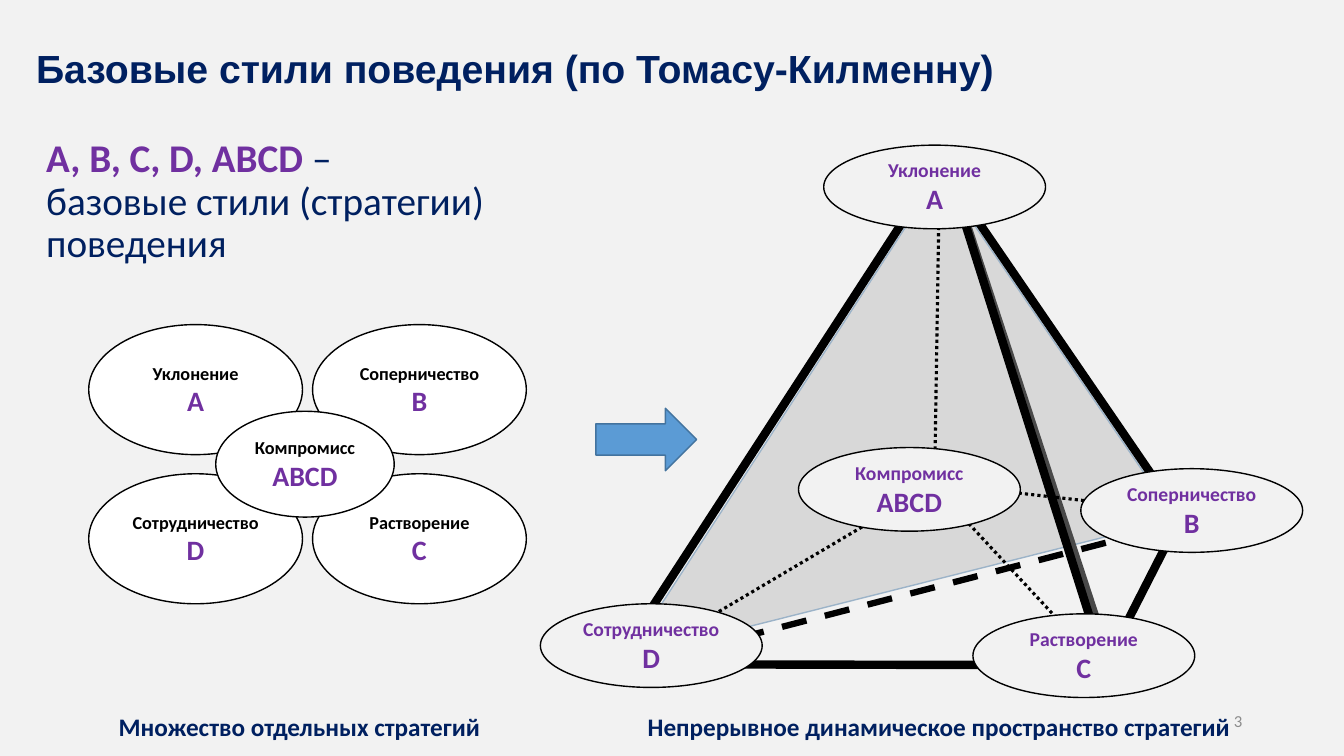
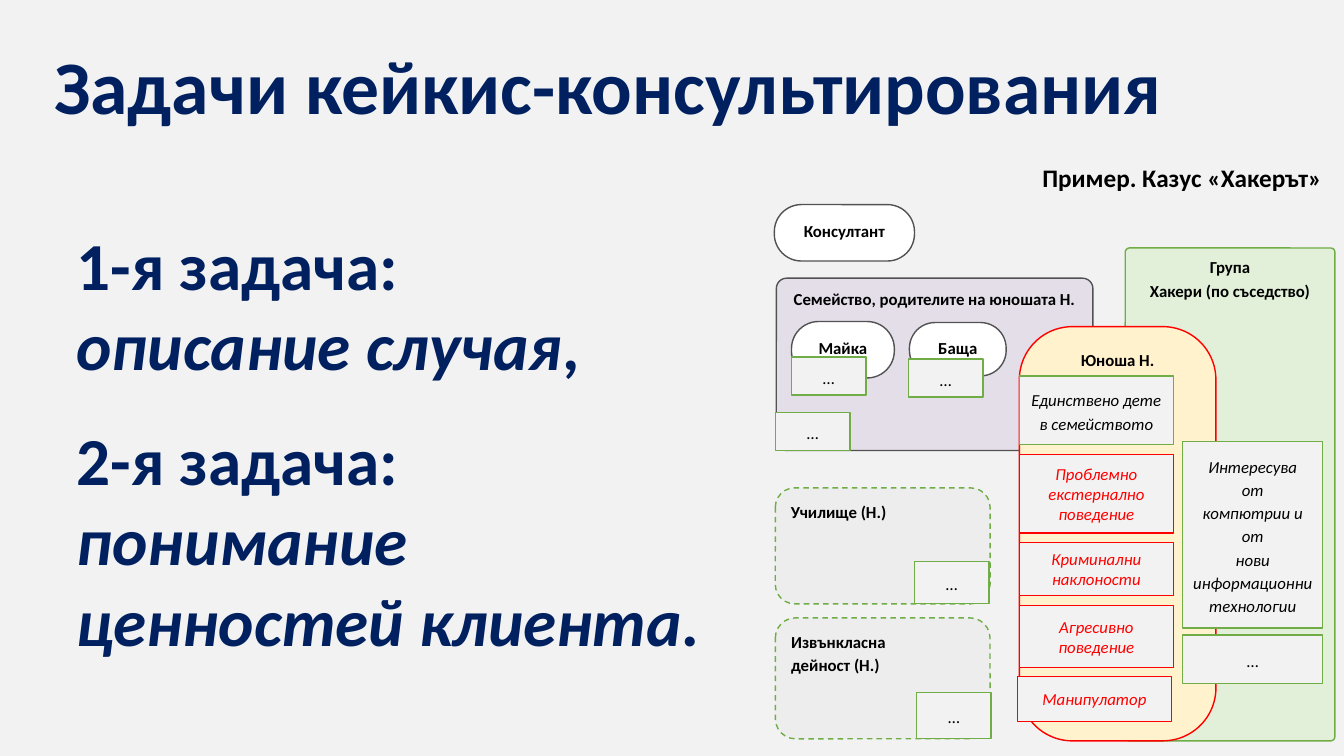
import dataclasses

import lxml.etree
import pptx
import pptx.dml.color
import pptx.enum.dml
import pptx.enum.shapes
import pptx.enum.text
import pptx.oxml.ns
import pptx.util

Inches = pptx.util.Inches
Pt = pptx.util.Pt
RGBColor = pptx.dml.color.RGBColor
MSO_SHAPE = pptx.enum.shapes.MSO_SHAPE
DASH = pptx.enum.dml.MSO_LINE.DASH
DOTTED = pptx.enum.dml.MSO_LINE.ROUND_DOT
ANCHOR = pptx.enum.text.MSO_ANCHOR
ALIGN = pptx.enum.text.PP_ALIGN

PAPER = RGBColor(0xF2, 0xF2, 0xF2)
WHITE = RGBColor(0xFF, 0xFF, 0xFF)
BLACK = RGBColor(0, 0, 0)
NAVY = RGBColor(0x00, 0x20, 0x60)
PURPLE = RGBColor(0x70, 0x30, 0xA0)
BLUE = RGBColor(0x5B, 0x9B, 0xD5)
DARK_BLUE = RGBColor(0x43, 0x73, 0x9E)
RED = RGBColor(0xFF, 0, 0)
GREEN = RGBColor(0x70, 0xAD, 0x47)
PALE_GREEN = RGBColor(0xE2, 0xF0, 0xD9)
PALE_YELLOW = RGBColor(0xFF, 0xF2, 0xCC)
PALE_GREY = RGBColor(0xED, 0xED, 0xED)
MID_GREY = RGBColor(0xBF, 0xBF, 0xBF)
NUMBER_GREY = RGBColor(0x8C, 0x8C, 0x8C)
DARK_GREY = RGBColor(0x52, 0x52, 0x52)


@dataclasses.dataclass(frozen=True)
class Type:
    size: float
    color: RGBColor = NAVY
    bold: bool = True
    italic: bool = False
    font: str = "Calibri"


CAPTION = Type(18)
LEAD = Type(28, bold=False)
TASK = Type(48)
TASK_ITALIC = Type(48, italic=True)
CASE_NAME = Type(12, BLACK)
CASE_TRAIT = Type(12, BLACK, bold=False, italic=True)
CASE_PROBLEM = Type(12, RED, bold=False, italic=True)
CASE_MORE = Type(12, BLACK, bold=False)

STYLES = {"A": "Уклонение", "B": "Соперничество", "C": "Растворение",
          "D": "Сотрудничество", "ABCD": "Компромисс"}


def write(frame, paragraphs, align=ALIGN.LEFT, anchor=ANCHOR.TOP,
          spacing=None, before=None, after=None):
    """Fill a frame with paragraphs, each a list of (text, Type); \\v breaks a line."""
    frame.word_wrap = True
    frame.vertical_anchor = anchor
    for index, pieces in enumerate(paragraphs):
        paragraph = frame.paragraphs[0] if index == 0 else frame.add_paragraph()
        paragraph.alignment = align
        if spacing:
            paragraph.line_spacing = spacing
        if before is not None:
            paragraph.space_before = Pt(before)
        if after is not None:
            paragraph.space_after = Pt(after)
        for text, kind in pieces:
            for part_index, part in enumerate(text.split("\v")):
                if part_index:
                    paragraph.add_line_break()
                if part:
                    run = paragraph.add_run()
                    run.text = part
                    run.font.name = kind.font
                    run.font.size = Pt(kind.size)
                    run.font.bold = kind.bold
                    run.font.italic = kind.italic
                    run.font.color.rgb = kind.color


def add_text(slide, box, paragraphs, **layout):
    label = slide.shapes.add_textbox(*map(Inches, box))
    write(label.text_frame, paragraphs, **layout)


def paint(shape, fill, line=None, width=1, opacity=None, dash=None):
    shape.shadow.inherit = False
    shape.fill.solid()
    shape.fill.fore_color.rgb = fill
    if opacity is not None:
        color = shape.fill._xPr.find(".//" + pptx.oxml.ns.qn("a:srgbClr"))
        alpha = lxml.etree.SubElement(color, pptx.oxml.ns.qn("a:alpha"))
        alpha.set("val", str(opacity * 1000))
    if line is None:
        shape.line.fill.background()
        return
    shape.line.color.rgb = line
    shape.line.width = Pt(width)
    if dash:
        shape.line.dash_style = dash


def add_shape(slide, preset, box, fill, line=None, **look):
    shape = slide.shapes.add_shape(preset, *map(Inches, box))
    paint(shape, fill, line, **look)
    return shape


def add_face(slide, left, top, corners, fill, line, **look):
    points = [(Inches(left + x), Inches(top + y)) for x, y in corners]
    builder = slide.shapes.build_freeform(*points[0], scale=1.0)
    builder.add_line_segments(points[1:], close=True)
    paint(builder.convert_to_shape(), fill, line, **look)


def add_edge(slide, left, top, start, end, width, dash):
    edge = slide.shapes.add_connector(
        pptx.enum.shapes.MSO_CONNECTOR.STRAIGHT,
        Inches(left + start[0]), Inches(top + start[1]),
        Inches(left + end[0]), Inches(top + end[1]))
    edge.line.color.rgb = BLACK
    edge.line.width = Pt(width)
    edge.line.dash_style = dash
    properties = edge._element.spPr
    lxml.etree.SubElement(properties, pptx.oxml.ns.qn("a:effectLst"))


def add_style_oval(slide, letter, box, fill, name_type):
    oval = add_shape(slide, MSO_SHAPE.OVAL, box, fill, BLACK)
    frame = oval.text_frame
    frame.margin_left = frame.margin_right = 0
    frame.margin_top = frame.margin_bottom = 0
    write(frame, [[(STYLES[letter], name_type)], [(letter, Type(20, PURPLE))]],
          align=ALIGN.CENTER, anchor=ANCHOR.MIDDLE)


def strategy_set(slide, left, top):
    """Four separate strategies in a grid, with the compromise over their centre."""
    for index, letter in enumerate("ABDC"):
        row, column = divmod(index, 2)
        add_style_oval(slide, letter,
                       (left + 2.22 * column, top + 1.48 * row, 2.12, 1.29),
                       WHITE, Type(13, BLACK))
    add_style_oval(slide, "ABCD", (left + 1.26, top + 0.86, 1.77, 1.05),
                   WHITE, Type(13, BLACK))


def strategy_pyramid(slide, left, top):
    """Pyramid with a strategy at each corner and the compromise inside."""
    add_face(slide, left, top, [(4.07, 0.65), (0.97, 5.44), (6.41, 4.07)],
             MID_GREY, DARK_BLUE)
    add_shape(slide, MSO_SHAPE.RECTANGLE, (left, top, 8.08, 6.42), PAPER, opacity=30)
    for corners in ([(0.85, 5.51), (4.12, 0.48), (5.77, 5.52)],
                    [(4.2, 0.75), (5.71, 5.52), (6.46, 4.05)]):
        add_face(slide, left, top, corners, PAPER, BLACK, width=6, opacity=30)
    add_edge(slide, left, top, (0.81, 5.58), (6.62, 4.07), 4.5, DASH)
    add_shape(slide, MSO_SHAPE.OVAL, (left + 3.98, top + 3.69, 0.07, 0.06),
              PAPER, BLACK, width=0.75, opacity=30)
    for start, end in (((0.81, 5.62), (3.99, 3.74)), ((4.02, 3.69), (4.07, 0.55)),
                       ((4.05, 3.72), (6.41, 3.99)), ((4.02, 3.75), (5.72, 5.58))):
        add_edge(slide, left, top, start, end, 2.25, DOTTED)
    for letter, x, y in (("B", 5.47, 3.57), ("C", 4.4, 5.01), ("D", 0.11, 4.91),
                         ("ABCD", 2.67, 3.36), ("A", 2.92, 0.36)):
        add_style_oval(slide, letter, (left + x, top + y, 2.2, 0.83),
                       PAPER, Type(14, PURPLE))


def case_area(slide, box, text, fill, line, radius=None, align=ALIGN.CENTER, **look):
    """Rounded area with its name at the top."""
    area = add_shape(slide, MSO_SHAPE.ROUNDED_RECTANGLE, box, fill, line, **look)
    if radius is not None:
        area.adjustments[0] = radius
    write(area.text_frame, [[(row, CASE_NAME)] for row in text.split("\n")],
          align=align, spacing=1.15)


def case_note(slide, box, text, kind, line=GREEN, spacing=1.15):
    note = add_shape(slide, MSO_SHAPE.RECTANGLE, box, PAPER, line)
    write(note.text_frame, [[(row, kind)] for row in text.split("\n")],
          align=ALIGN.CENTER, anchor=ANCHOR.MIDDLE, spacing=spacing)


def case_map(slide, left, top):
    """Map of the people and groups around the young man."""
    def at(x, y, width, height):
        return left + x, top + y, width, height

    add_text(slide, at(1.62, 0, 3.91, 0.4),
             [[("Пример. Казус «Хакерът»", Type(18, BLACK))]], align=ALIGN.RIGHT)
    case_area(slide, at(3.48, 0.9, 2.08, 4.89), "Група\nХакери (по съседство)",
              PALE_GREEN, GREEN, 0.02)
    case_area(slide, at(0.02, 1.2, 3.14, 1.71), "Семейство, родителите на юношата Н.",
              PURPLE, DARK_GREY, 0.06, opacity=10)
    case_area(slide, at(2.43, 1.68, 1.95, 4.11), "Юноша Н.", PALE_YELLOW, RED, 0.27)
    for name, y, height in (("Училище (Н.)", 3.28, 1.15),
                            ("Извънкласна\nдейност (Н.)", 4.57, 1.2)):
        case_area(slide, at(0.01, y, 2.13, height), name, PALE_GREY, GREEN,
                  align=ALIGN.LEFT, dash=DASH)
    for name, *box in (("Консултант", 0, 0.47, 1.39, 0.56),
                       ("Майка", 0.17, 1.63, 1.02, 0.56),
                       ("Баща", 1.34, 1.64, 0.96, 0.53)):
        case_area(slide, at(*box), name, WHITE, DARK_GREY, 0.48)

    case_note(slide, at(2.43, 2.17, 1.53, 0.68), "Единствено дете в семейството",
              CASE_TRAIT)
    for problem, x, y, height in (
            ("Проблемно екстернално поведение", 2.43, 2.95, 0.78),
            ("Криминални наклоности", 2.43, 3.82, 0.53),
            ("Агресивно поведение", 2.43, 4.45, 0.61),
            ("Манипулатор", 2.41, 5.15, 0.45)):
        case_note(slide, at(x, y, 1.53, height), problem, CASE_PROBLEM, RED, None)
    case_note(slide, at(4.05, 2.82, 1.39, 1.85),
              "Интересува\nот\nкомпютрии и от\nнови информационни технологии",
              CASE_TRAIT)
    for box in ((4.05, 4.74, 1.39, 0.48), (0.17, 1.98, 0.74, 0.38),
                (1.33, 2, 0.74, 0.38), (0.01, 2.53, 0.74, 0.38),
                (1.39, 4.01, 0.74, 0.42), (1.41, 5.31, 0.74, 0.46)):
        case_note(slide, at(*box), "…", CASE_MORE)


def new_slide(deck, title, box, kind, **layout):
    """Blank slide with the shared background and a title."""
    slide = deck.slides.add_slide(deck.slide_layouts[6])
    slide.background.fill.solid()
    slide.background.fill.fore_color.rgb = PAPER
    add_text(slide, box, [[(title, kind)]], **layout)
    return slide


def styles_slide(deck):
    slide = new_slide(deck, "Базовые стили поведения (по Томасу-Килменну)",
                      (0.26, 0.39, 12.19, 0.57), Type(28, font="Arial"))
    strategy_pyramid(slide, 5.25, 1.08)
    strategy_set(slide, 0.88, 3.22)
    add_text(slide, (0.36, 1.33, 5.89, 1.37),
             [[("А, B, C, D, ABCD ", Type(28, PURPLE)),
               ("–\vбазовые стили (стратегии) поведения", LEAD)]],
             spacing=0.9, before=10)
    add_shape(slide, MSO_SHAPE.RIGHT_ARROW, (5.91, 4.05, 1, 0.62), BLUE, DARK_BLUE)
    add_text(slide, (9.42, 6.95, 3, 0.4), [[("3", Type(12, NUMBER_GREY, bold=False))]],
             align=ALIGN.RIGHT, anchor=ANCHOR.MIDDLE)
    for caption, left, width in (
            ("Множество отдельных стратегий", 0.64, 4.22),
            ("Непрерывное динамическое пространство стратегий", 5.91, 6.39)):
        add_text(slide, (left, 7.01, width, 0.4), [[(caption, CAPTION)]],
                 align=ALIGN.RIGHT)


def tasks_slide(deck):
    slide = new_slide(deck, "Задачи кейкис-консультирования",
                      (0.44, 0.44, 12.01, 0.79), Type(54),
                      anchor=ANCHOR.MIDDLE, before=12, after=12)
    add_text(slide, (0.66, 1.81, 6.88, 5.14),
             [[("1-я задача:\v", TASK), ("описание случая", TASK_ITALIC), (",", TASK)],
              [("2-я задача:\v", TASK), ("понимание ценностей клиента.", TASK_ITALIC)]],
             anchor=ANCHOR.MIDDLE, before=12, after=12)
    case_map(slide, 7.68, 1.56)


def main():
    deck = pptx.Presentation()
    deck.slide_width = Inches(13.33)
    deck.slide_height = Inches(7.5)
    styles_slide(deck)
    tasks_slide(deck)
    deck.save("out.pptx")


if __name__ == "__main__":
    main()
